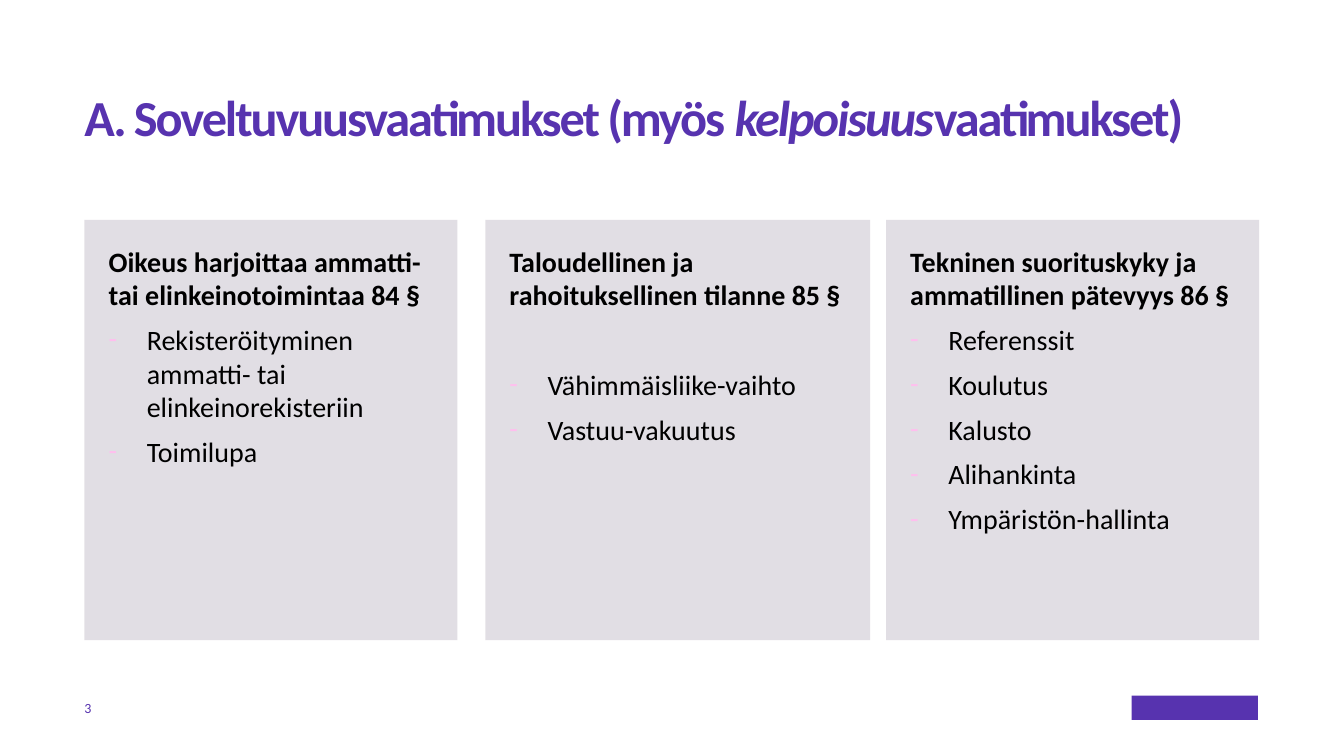
from lxml import etree
from pptx import Presentation
from pptx import util as u
from pptx.dml.color import RGBColor
from pptx.enum import shapes, text
from pptx.oxml.ns import qn

COLORS = {"violet": "5733AF", "panel": "C5BFCA", "bullet": "FFBFEE", "ink": "000000"}
LEFT, PANEL_TOP, PANEL_HEIGHT, PITCH = 2.13, 5.54, 10.59, 10.1
INSET, INDENT = 0.61, 0.96

# Heading, panel width, space before the list in points, list items
PANELS = [
    ("Oikeus harjoittaa ammatti- tai elinkeinotoimintaa 84 §", 9.4, 8,
     ["Rekisteröityminen ammatti- tai elinkeinorekisteriin", "Toimilupa"]),
    ("Taloudellinen ja rahoituksellinen tilanne 85 §", 9.7, 40,
     ["Vähimmäisliike-vaihto", "Vastuu-vakuutus"]),
    ("Tekninen suorituskyky ja ammatillinen pätevyys 86 §", 9.4, 8,
     ["Referenssit", "Koulutus", "Kalusto", "Alihankinta", "Ympäristön-hallinta"]),
]


def apply(target, **values):
    for name, value in values.items():
        setattr(target, name, value)


class SlideBuilder:
    def __init__(self, page, font):
        self.page, self.font = page, font

    def color(self, name):
        return RGBColor.from_string(COLORS[name])

    def frame(self, box, inset=0, anchor=text.MSO_ANCHOR.TOP):
        margin = u.Cm(inset)
        apply(box.text_frame, word_wrap=True, vertical_anchor=anchor,
              margin_left=margin, margin_right=margin,
              margin_top=margin, margin_bottom=margin)
        return box.text_frame

    def text_box(self, left, top, width, height, **options):
        box = self.page.shapes.add_textbox(*map(u.Cm, (left, top, width, height)))
        return self.frame(box, **options)

    def rectangle(self, left, top, width, height, fill, alpha=100):
        box = self.page.shapes.add_shape(
            shapes.MSO_SHAPE.RECTANGLE, *map(u.Cm, (left, top, width, height)))
        box.shadow.inherit = False
        box.fill.solid()
        box.fill.fore_color.rgb = self.color(fill)
        box.line.fill.background()
        if alpha < 100:
            tint = box.fill._xPr.find(qn("a:solidFill"))[0]
            etree.SubElement(tint, qn("a:alpha"), val=str(alpha * 1000))
        return box

    def span(self, para, words, color, spacing=0, **values):
        span = para.add_run()
        span.text = words
        apply(span.font, name=self.font, **values)
        span.font.color.rgb = self.color(color)
        if spacing:
            span._r.get_or_add_rPr().set("spc", str(int(spacing * 100)))

    def bullet(self, para):
        props = para._p.get_or_add_pPr()
        props.set("marL", str(u.Cm(INDENT)))
        props.set("indent", str(-u.Cm(INDENT)))
        tint = etree.SubElement(props, qn("a:buClr"))
        etree.SubElement(tint, qn("a:srgbClr"), val=COLORS["bullet"])
        etree.SubElement(props, qn("a:buFont"), typeface=self.font)
        etree.SubElement(props, qn("a:buChar"), char="-")

    def panel(self, left, heading, width, list_gap, items):
        box = self.rectangle(left, PANEL_TOP, width, PANEL_HEIGHT, "panel", alpha=50)
        frame = self.frame(box, inset=INSET)
        para = frame.paragraphs[0]
        para.alignment = text.PP_ALIGN.LEFT
        self.span(para, heading, "ink", size=u.Pt(20), bold=True)
        for index, item in enumerate(items):
            para = frame.add_paragraph()
            self.bullet(para)
            apply(para, alignment=text.PP_ALIGN.LEFT,
                  space_before=u.Pt(8 if index else list_gap))
            self.span(para, item, "ink", size=u.Pt(20), bold=False)


def main():
    deck = Presentation()
    apply(deck, slide_width=u.Cm(33.87), slide_height=u.Cm(19.05))
    page = deck.slides.add_slide(deck.slide_layouts[6])
    builder = SlideBuilder(page, "Calibri")

    # Title
    para = builder.text_box(LEFT, 2.34, 29.62, 2.79).paragraphs[0]
    para.line_spacing = 0.9
    for words, italic in [("A. Soveltuvuusvaatimukset (myös ", False),
                          ("kelpoisuus", True), ("vaatimukset)", False)]:
        builder.span(para, words, "violet", spacing=-1.5,
                     size=u.Pt(36), bold=True, italic=italic)

    # Requirement panels
    for column, panel in enumerate(PANELS):
        builder.panel(LEFT + column * PITCH, *panel)

    # Footer: page number and emblem block
    number = builder.text_box(LEFT, 17.53, 1.19, 0.61, anchor=text.MSO_ANCHOR.MIDDLE)
    builder.span(number.paragraphs[0], "3", "violet", size=u.Pt(10))
    builder.rectangle(28.52, 17.53, 3.18, 0.61, "violet")

    deck.save("out.pptx")


if __name__ == "__main__":
    main()
